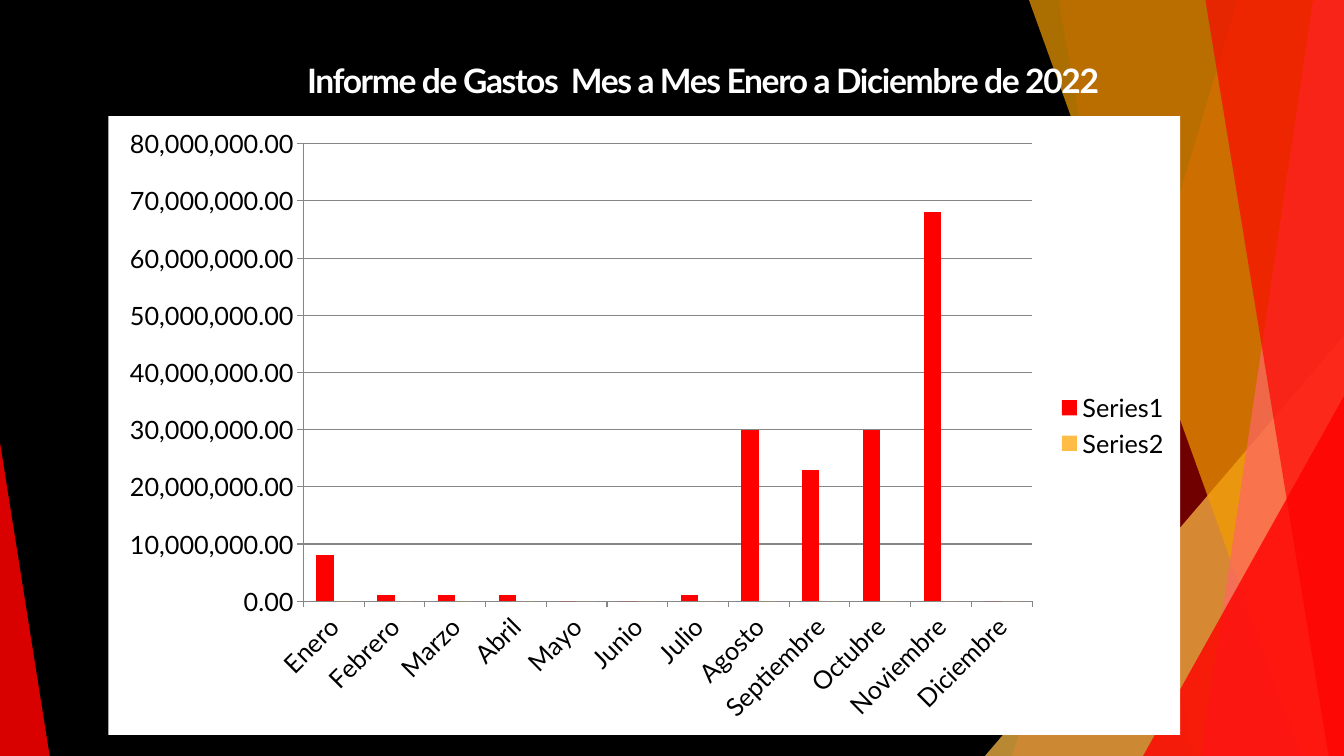
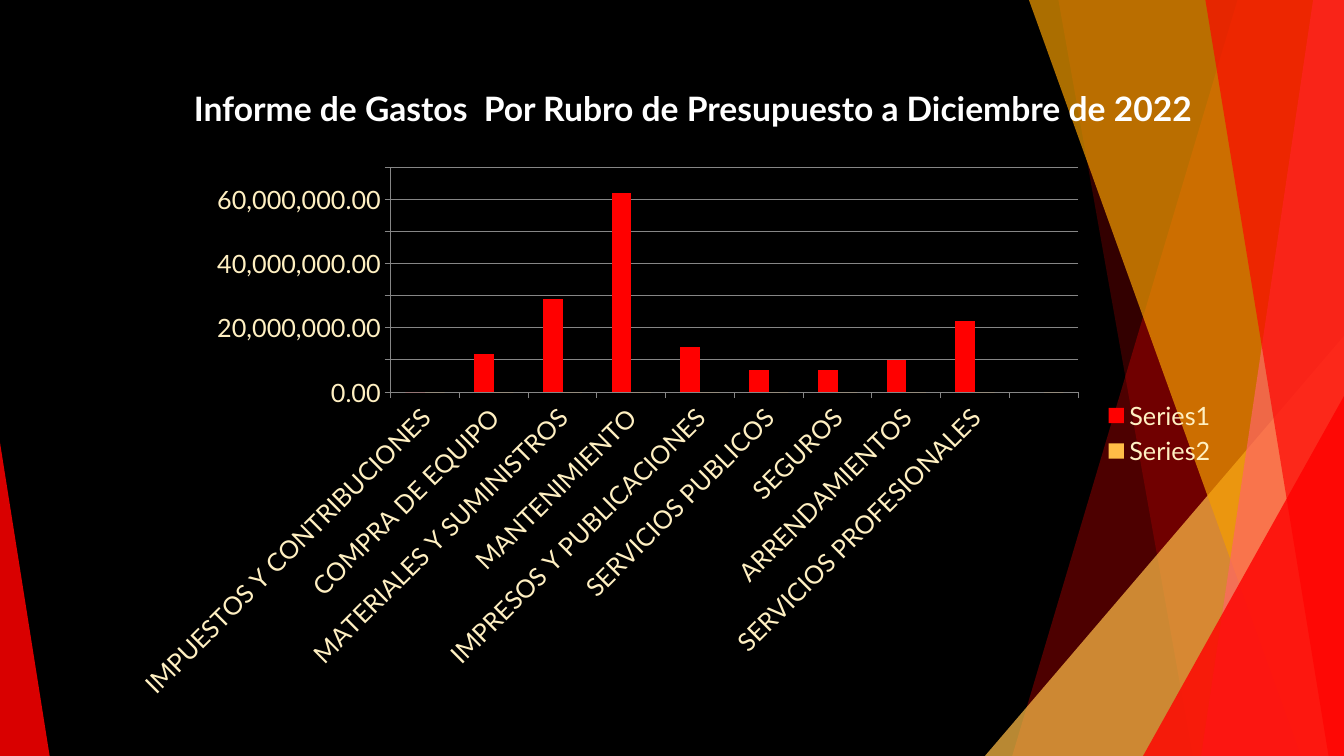
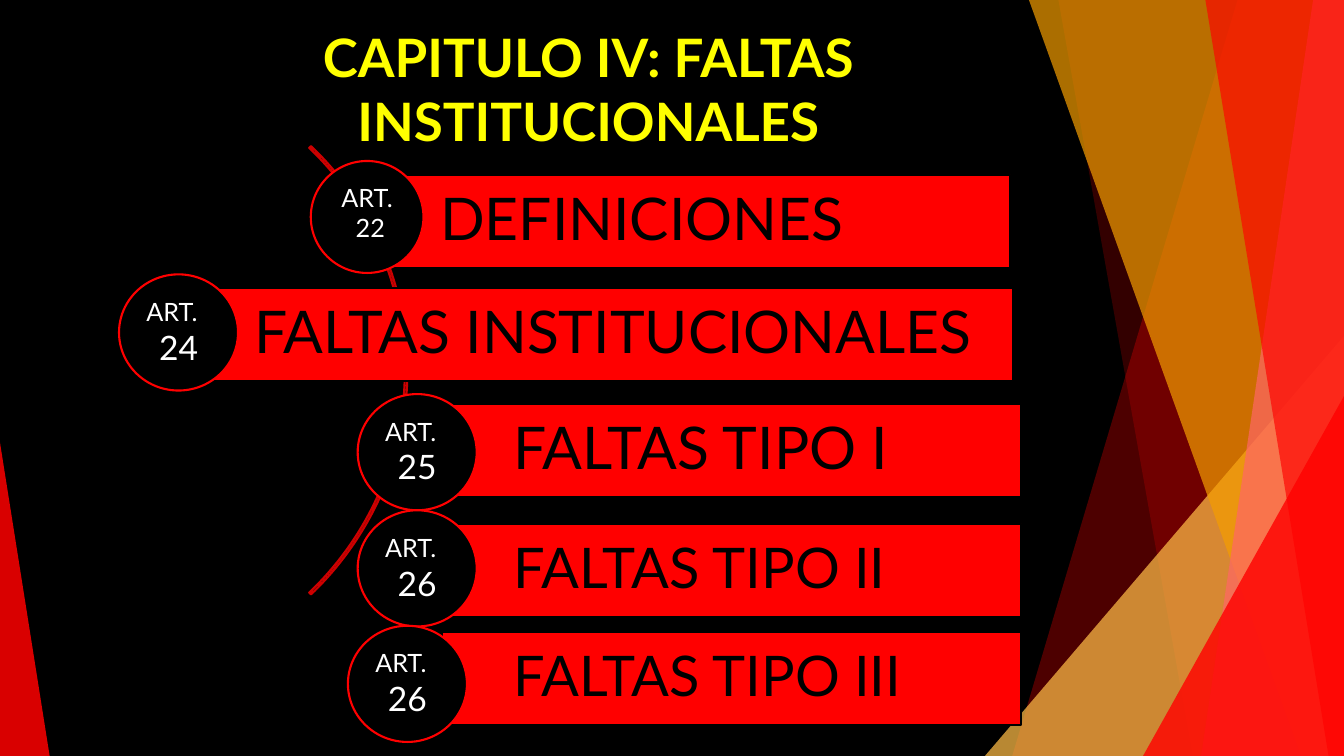
from lxml import etree
from pptx import Presentation
from pptx.chart.data import CategoryChartData
from pptx.dml.color import RGBColor
from pptx.enum.chart import XL_CHART_TYPE, XL_LEGEND_POSITION, XL_TICK_MARK
from pptx.enum.shapes import MSO_CONNECTOR, MSO_SHAPE as SHAPE
from pptx.enum.text import MSO_ANCHOR as ANCHOR, PP_ALIGN as ALIGN
from pptx.oxml import parse_xml
from pptx.oxml.ns import nsdecls, qn
from pptx.util import Pt

FONT = "Lato"
W, H = 960, 540
C = {"black": "000000", "white": "FFFFFF", "red": "FF0000", "gold": "FFBD47",
     "orange": "F49D00", "pink": "FF6666", "cream": "FFF0C2", "yellow": "FFFF00",
     "arc": "CC0000", "grid": "868686"}

# Facets reach the right edge: top x, bottom x, colour, opacity in percent
BACK_FACETS = [(884, 723, "red", 30), (756, 852, "red", 20)]
FRONT_FACETS = [(735, 929.5, "orange", 70), (938, 858, "pink", 70), (861, 949, "red", 65)]
# Corner triangles: box, apex position, colour, opacity in percent
GOLD_CORNER = ((703.5, 240, 256.5, 300), 1, "gold", 72)
RED_CORNERS = [((816.5, 283, 143.5, 257), 1, "red", 80), ((0, 316, 35.5, 224), 0, "red", 85)]

MILLION = 1000000
MONTHS = ["Enero", "Febrero", "Marzo", "Abril", "Mayo", "Junio", "Julio", "Agosto",
          "Septiembre", "Octubre", "Noviembre", "Diciembre"]
MONTH_MILLIONS = [8, 1, 1, 1, 0, 0, 1, 30, 23, 30, 68, 0]
ITEMS = ["IMPUESTOS Y CONTRIBUCIONES", "COMPRA DE EQUIPO", "MATERIALES Y SUMINISTROS",
         "MANTENIMIENTO", "IMPRESOS Y PUBLICACIONES", "SERVICIOS PUBLICOS", "SEGUROS",
         "ARRENDAMIENTOS", "SERVICIOS PROFESIONALES", ""]
ITEM_MILLIONS = [0, 12, 29, 62, 14, 7, 7, 10, 22, None]

# Bar box, label, label size, circle box, article number, number size
BAR_H = 66.5
ARTICLES = [
    ((263.5, 124.75, 458, BAR_H), "DEFINICIONES", 42, (222, 115, 80.5, 80), " 22", 18),
    ((130.5, 206, 593.5, BAR_H), "FALTAS INSTITUCIONALES", 42, (85, 196, 85, 83), "24", 24),
    ((315.5, 288.5, 414, BAR_H), "FALTAS TIPO I", 42, (255.5, 281.5, 85, 83), "25", 24),
    ((315.5, 374, 414, BAR_H), "FALTAS TIPO II", 40, (255.5, 364.5, 85, 83), "26", 24),
    ((315.5, 451.5, 414, BAR_H), "FALTAS TIPO III", 40, (248.5, 447, 85, 83), "26", 24),
]


def rgb(name):
    return RGBColor.from_string(C[name])


def pts(box):
    return [Pt(v) for v in box]


def set_font(font, size, color, **extra):
    for key, value in {"name": FONT, "size": Pt(size), **extra}.items():
        setattr(font, key, value)
    font.color.rgb = rgb(color)


def paint(sp, fill=None, line=None, alpha=None):
    sp.shadow.inherit = False
    if fill:
        sp.fill.solid()
        sp.fill.fore_color.rgb = rgb(fill)
    else:
        sp.fill.background()
    if alpha:
        clr = sp.fill._xPr.find(f".//{qn('a:srgbClr')}")
        etree.SubElement(clr, qn("a:alpha")).set("val", str(alpha * 1000))
    if line:
        sp.line.color.rgb = rgb(line)
        sp.line.width = Pt(1.5)
    else:
        sp.line.fill.background()


def write(p, text, size, color, align, **extra):
    p.alignment = align
    r = p.add_run()
    r.text = text
    set_font(r.font, size, color, **extra)
    return r


def add_facet(s, top_x, bottom_x, color, alpha):
    builder = s.shapes.build_freeform(Pt(top_x), 0)
    builder.add_line_segments([pts(xy) for xy in ((W, 0), (W, H), (bottom_x, H))], close=True)
    paint(builder.convert_to_shape(), color, alpha=alpha)


def add_corner(s, box, apex, color, alpha):
    sp = s.shapes.add_shape(SHAPE.ISOSCELES_TRIANGLE, *pts(box))
    sp.adjustments[0] = apex
    paint(sp, color, alpha=alpha)


def add_backdrop(s):
    for ends in ((738, 0, 834, H), (W, 290, 584.5, H)):
        cn = s.shapes.add_connector(MSO_CONNECTOR.STRAIGHT, *pts(ends))
        cn.line.color.rgb = rgb("black")
        cn.line.width = Pt(0.75)
        etree.SubElement(cn._element.spPr, qn("a:effectLst"))
    for facet in BACK_FACETS:
        add_facet(s, *facet)
    add_corner(s, *GOLD_CORNER)
    for facet in FRONT_FACETS:
        add_facet(s, *facet)
    for corner in RED_CORNERS:
        add_corner(s, *corner)


def add_title(s, box, text, size=24, color="white", spacing=0):
    tf = s.shapes.add_textbox(*pts(box)).text_frame
    tf.word_wrap = True
    tf.vertical_anchor = ANCHOR.MIDDLE
    r = write(tf.paragraphs[0], text, size, color, ALIGN.CENTER, bold=True)
    if spacing:
        r.font._element.set("spc", str(spacing * 100))


def add_column_chart(s, box, cats, millions, color, fill=None):
    data = CategoryChartData(number_format="#,##0.00")
    data.categories = cats
    data.add_series("Series1", [None if v is None else v * MILLION for v in millions])
    data.add_series("Series2", [0] * len(cats))
    chart = s.shapes.add_chart(XL_CHART_TYPE.COLUMN_CLUSTERED, *pts(box), data).chart
    set_font(chart.font, 18, color)
    chart.has_title = False
    chart.has_legend = True
    chart.legend.position = XL_LEGEND_POSITION.RIGHT
    chart.legend.include_in_layout = False
    plot = chart.plots[0]
    for key, value in {"gap_width": 150, "overlap": 0, "vary_by_categories": False}.items():
        setattr(plot, key, value)
    for series, name in zip(plot.series, ("red", "gold")):
        series.format.fill.solid()
        series.format.fill.fore_color.rgb = rgb(name)
        series.invert_if_negative = False

    val, cat = chart.value_axis, chart.category_axis
    val.has_major_gridlines = True
    val.major_gridlines.format.line.color.rgb = rgb("grid")
    val.tick_labels.number_format = "#,##0.00"
    val.tick_labels.number_format_is_linked = False
    for axis in (val, cat):
        axis.major_tick_mark = XL_TICK_MARK.OUTSIDE
        axis.format.line.color.rgb = rgb("grid")
    set_font(cat.tick_labels.font, 18, color)
    cat._element.find(qn("c:txPr")).find(qn("a:bodyPr")).set("rot", "-2700000")
    if fill:
        chart._chartSpace.find(qn("c:txPr")).addprevious(parse_xml(
            f'<c:spPr {nsdecls("c", "a")}><a:solidFill><a:srgbClr val="{C[fill]}"/>'
            f'</a:solidFill><a:ln><a:noFill/></a:ln></c:spPr>'))


def add_article(s, bar_box, label, size, circle_box, number, number_size):
    bar = s.shapes.add_shape(SHAPE.RECTANGLE, *pts(bar_box))
    paint(bar, "red", "black")
    tf = bar.text_frame
    for key, value in {"margin_left": 51, "margin_right": 8.5, "margin_top": 8.5,
                       "margin_bottom": 8.5}.items():
        setattr(tf, key, Pt(value))
    tf.word_wrap = True
    tf.vertical_anchor = ANCHOR.MIDDLE
    tf.paragraphs[0].line_spacing = 0.9
    write(tf.paragraphs[0], label, size, "black", ALIGN.LEFT)

    circle = s.shapes.add_shape(SHAPE.OVAL, *pts(circle_box))
    paint(circle, "black", "red")
    tf = circle.text_frame
    tf.word_wrap = True
    tf.vertical_anchor = ANCHOR.TOP
    write(tf.paragraphs[0], "ART.", 18, "white",
          ALIGN.CENTER if number_size == 18 else ALIGN.LEFT)
    write(tf.add_paragraph(), number, number_size, "white", ALIGN.CENTER)


def add_article_list(s):
    arc = s.shapes.add_shape(SHAPE.BLOCK_ARC, *pts((-167, 40.5, 458, 448)))
    for i, value in enumerate((189, 27, 0.004)):
        arc.adjustments[i] = value
    paint(arc, line="arc")
    for article in ARTICLES:
        add_article(s, *article)


def new_slide(prs):
    s = prs.slides.add_slide(prs.slide_layouts[6])
    add_backdrop(s)
    return s


def main():
    prs = Presentation()
    prs.slide_width, prs.slide_height = Pt(W), Pt(H)
    bg = prs.slide_master.background.fill
    bg.solid()
    bg.fore_color.rgb = rgb("black")

    s = new_slide(prs)
    add_title(s, (102, 12.5, 800, 90),
              "Informe de Gastos  Mes a Mes Enero a Diciembre de 2022", spacing=-1)
    add_column_chart(s, (77.5, 83, 765.5, 442), MONTHS, MONTH_MILLIONS, "black", "white")

    s = new_slide(prs)
    add_title(s, (95, 32, 800, 90),
              "Informe de Gastos  Por Rubro de Presupuesto a Diciembre de 2022")
    add_column_chart(s, (83, 111.5, 793.5, 396), ITEMS, ITEM_MILLIONS, "cream")

    s = new_slide(prs)
    add_title(s, (123.5, 14, 593.5, 98), "CAPITULO IV: FALTAS INSTITUCIONALES",
              37.8, "yellow")
    add_article_list(s)
    prs.save("out.pptx")


if __name__ == "__main__":
    main()
